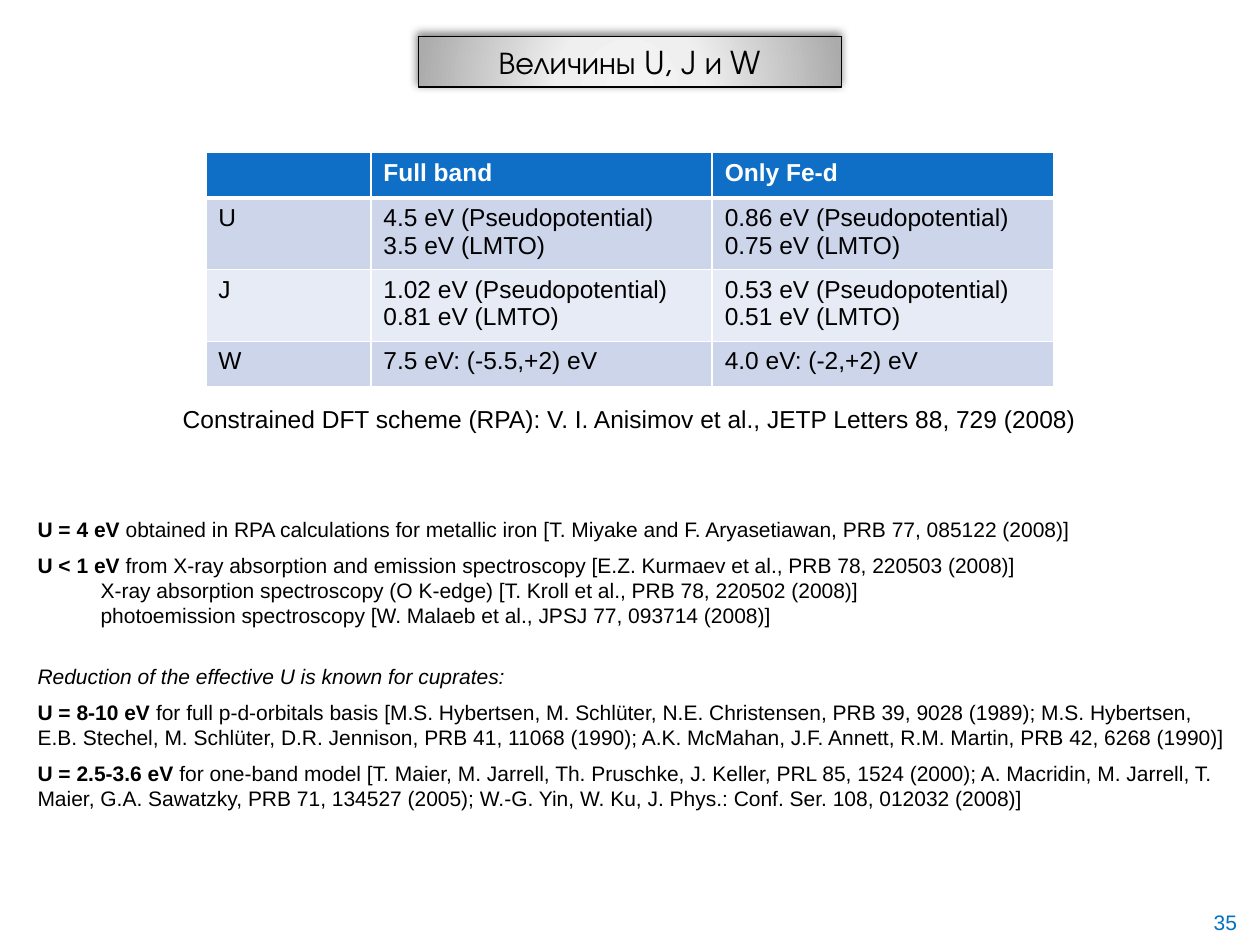
"""Build the slide on the U, J and W values with its table and references."""
from dataclasses import dataclass, field

import pptx
import pptx.dml.color
import pptx.enum.text
import pptx.oxml
import pptx.oxml.ns
import pptx.util

Pt = pptx.util.Pt
RGBColor = pptx.dml.color.RGBColor
Align = pptx.enum.text.PP_ALIGN
Anchor = pptx.enum.text.MSO_ANCHOR

BLACK = RGBColor(0x00, 0x00, 0x00)
WHITE = RGBColor(0xFF, 0xFF, 0xFF)
HEADER_BLUE = RGBColor(0x0F, 0x6F, 0xC6)
BAND_DARK = RGBColor(0xCC, 0xD5, 0xEA)
BAND_LIGHT = RGBColor(0xE7, 0xEB, 0xF5)
NUMBER_BLUE = RGBColor(0x00, 0x70, 0xC0)

NAMESPACE = pptx.oxml.ns.nsdecls("a")
TITLE_GRADIENT = f"""<a:gradFill {NAMESPACE} rotWithShape="1"><a:gsLst>
<a:gs pos="0"><a:srgbClr val="F4F4F4"/></a:gs>
<a:gs pos="34000"><a:srgbClr val="EFEFEF"/></a:gs>
<a:gs pos="100000"><a:srgbClr val="ABABAB"/></a:gs></a:gsLst>
<a:path path="circle"><a:fillToRect l="50000" t="155000" r="50000" b="-55000"/></a:path>
</a:gradFill>"""
TITLE_SHADOW = f"""<a:effectLst {NAMESPACE}>
<a:outerShdw blurRad="{Pt(5)}" dist="{Pt(2)}" dir="14700000" rotWithShape="0">
<a:srgbClr val="000000"><a:alpha val="50000"/></a:srgbClr></a:outerShdw></a:effectLst>"""


@dataclass(frozen=True)
class Span:
    text: str
    style: dict = field(default_factory=dict)


@dataclass(frozen=True)
class Note:
    left: float
    top: float
    width: float
    height: float
    paragraphs: list[list[Span]]
    size: float = 12
    color: RGBColor = BLACK
    alignment: Align = Align.LEFT
    anchor: Anchor = Anchor.TOP
    gap: float = 0


BOLD = {"bold": True}
ITALIC = {"italic": True}

NOTES = [
    Note(14.4, 291.6, 698.4, 71.3, [
        [Span("U = 4 eV", BOLD),
         Span(" obtained in RPA calculations for metallic iron "
              "[T. Miyake and F. Aryasetiawan, PRB 77, 085122 (2008)]")],
        [Span("U < 1 eV", BOLD),
         Span(" from X-ray absorption and emission spectroscopy "
              "[E.Z. Kurmaev et al., PRB 78, 220503 (2008)]\n"
              "\tX-ray absorption spectroscopy (O K-edge) [T. Kroll et al., PRB 78, 220502 (2008)]\n"
              "\tphotoemission spectroscopy [W. Malaeb et al., JPSJ 77, 093714 (2008)]")],
    ], gap=6),
    Note(81.4, 227.5, 556.6, 24.5, [
        [Span("Constrained DFT scheme (RPA): V. I. Anisimov et al., JETP Letters 88, 729 (2008)")],
    ], size=14, alignment=Align.CENTER),
    Note(14.4, 375.8, 698.4, 92.2, [
        [Span("Reduction of the effective U is known for cuprates:", ITALIC)],
        [Span("U = 8-10 eV ", BOLD),
         Span("for full p-d-orbitals basis [M.S. Hybertsen, M. Schlüter, N.E. Christensen, "
              "PRB 39, 9028 (1989); M.S. Hybertsen, E.B. Stechel, M. Schlüter, D.R. Jennison, "
              "PRB 41, 11068 (1990); A.K. McMahan, J.F. Annett, R.M. Martin, PRB 42, 6268 (1990)]")],
        [Span("U = 2.5-3.6 eV", BOLD),
         Span(" for one-band model [T. Maier, M. Jarrell, Th. Pruschke, J. Keller, "
              "PRL 85, 1524 (2000); A. Macridin, M. Jarrell, T. Maier, G.A. Sawatzky, "
              "PRB 71, 134527 (2005); W.-G. Yin, W. Ku, J. Phys.: Conf. Ser. 108, 012032 (2008)]")],
    ], gap=6),
    Note(680.4, 514.1, 39.6, 23.8, [[Span("35")]],
         color=NUMBER_BLUE, alignment=Align.CENTER, anchor=Anchor.BOTTOM),
]

VALUES = [
    ["", "Full band", "Only Fe-d"],
    ["U", "4.5 eV (Pseudopotential)\n3.5 eV (LMTO)", "0.86 eV (Pseudopotential)\n0.75 eV (LMTO)"],
    ["J", "1.02 eV (Pseudopotential)\n0.81 eV (LMTO)", "0.53 eV (Pseudopotential)\n0.51 eV (LMTO)"],
    ["W", "7.5 eV: (-5.5,+2) eV", "4.0 eV: (-2,+2) eV"],
]
COLUMN_WIDTHS = [94.3, 195.1, 195.1]
ROW_HEIGHTS = [26, 41, 41, 26]
ROW_FILLS = [HEADER_BLUE, BAND_DARK, BAND_LIGHT, BAND_DARK]


def apply_format(target, values: dict) -> None:
    for attribute, value in values.items():
        setattr(target, attribute, value)


def write_span(paragraph, span: Span, size: float, color: RGBColor, face: str = "Arial") -> None:
    for index, line in enumerate(span.text.split("\n")):
        if index:
            paragraph.add_line_break()
        run = paragraph.add_run()
        run.text = line
        apply_format(run.font, {"name": face, "size": Pt(size), "bold": False,
                                "italic": False, **span.style})
        run.font.color.rgb = color


def draw_title(slide) -> None:
    title = slide.shapes.title
    apply_format(title, {"left": Pt(239), "top": Pt(20.9), "width": Pt(242), "height": Pt(28.8)})
    properties = title._element.spPr
    properties.append(pptx.oxml.parse_xml(TITLE_GRADIENT))
    title.line.color.rgb = BLACK
    title.line.width = Pt(0.75)
    properties.append(pptx.oxml.parse_xml(TITLE_SHADOW))
    apply_format(title.text_frame, {"word_wrap": True, "vertical_anchor": Anchor.MIDDLE,
                                    "auto_size": pptx.enum.text.MSO_AUTO_SIZE.NONE})
    heading = title.text_frame.paragraphs[0]
    heading.alignment = Align.CENTER
    write_span(heading, Span("Величины U, J и W"), 18, BLACK, "TeX Gyre Adventor")


def draw_note(slide, note: Note) -> None:
    bounds = (Pt(side) for side in (note.left, note.top, note.width, note.height))
    frame = slide.shapes.add_textbox(*bounds).text_frame
    apply_format(frame, {"word_wrap": True, "vertical_anchor": note.anchor})
    for index, spans in enumerate(note.paragraphs):
        paragraph = frame.add_paragraph() if index else frame.paragraphs[0]
        apply_format(paragraph, {"alignment": note.alignment,
                                 "space_before": Pt(note.gap if index else 0)})
        for span in spans:
            write_span(paragraph, span, note.size, note.color)


def draw_borders(cell, is_header: bool) -> None:
    widths = {"lnL": 1, "lnR": 1, "lnT": 1, "lnB": 3 if is_header else 1}
    for side, width in widths.items():
        cell._tc.get_or_add_tcPr().append(pptx.oxml.parse_xml(
            f'<a:{side} {NAMESPACE} w="{Pt(width)}"><a:solidFill>'
            f'<a:srgbClr val="{WHITE}"/></a:solidFill></a:{side}>'))


def fill_cell(cell, text: str, fill: RGBColor, is_header: bool) -> None:
    draw_borders(cell, is_header)
    cell.fill.solid()
    cell.fill.fore_color.rgb = fill
    for index, line in enumerate(text.split("\n")):
        paragraph = cell.text_frame.add_paragraph() if index else cell.text_frame.paragraphs[0]
        if line:
            write_span(paragraph, Span(line, {"bold": is_header}), 14, WHITE if is_header else BLACK)
        else:
            paragraph._p.get_or_add_endParaRPr().set("sz", "1400")


def draw_values(slide) -> None:
    table = slide.shapes.add_table(
        len(VALUES), len(COLUMN_WIDTHS), Pt(117.6), Pt(87.1),
        Pt(sum(COLUMN_WIDTHS)), Pt(sum(ROW_HEIGHTS))).table
    for column, width in zip(table.columns, COLUMN_WIDTHS):
        column.width = Pt(width)
    for row_index, (row, height) in enumerate(zip(table.rows, ROW_HEIGHTS)):
        row.height = Pt(height)
        for cell, text in zip(row.cells, VALUES[row_index]):
            fill_cell(cell, text, ROW_FILLS[row_index], row_index == 0)


def main() -> None:
    deck = pptx.Presentation()
    apply_format(deck, {"slide_width": Pt(720), "slide_height": Pt(540)})
    slide = deck.slides.add_slide(deck.slide_layouts[5])
    draw_title(slide)
    draw_values(slide)
    for note in NOTES:
        draw_note(slide, note)
    deck.save("out.pptx")


if __name__ == "__main__":
    main()
